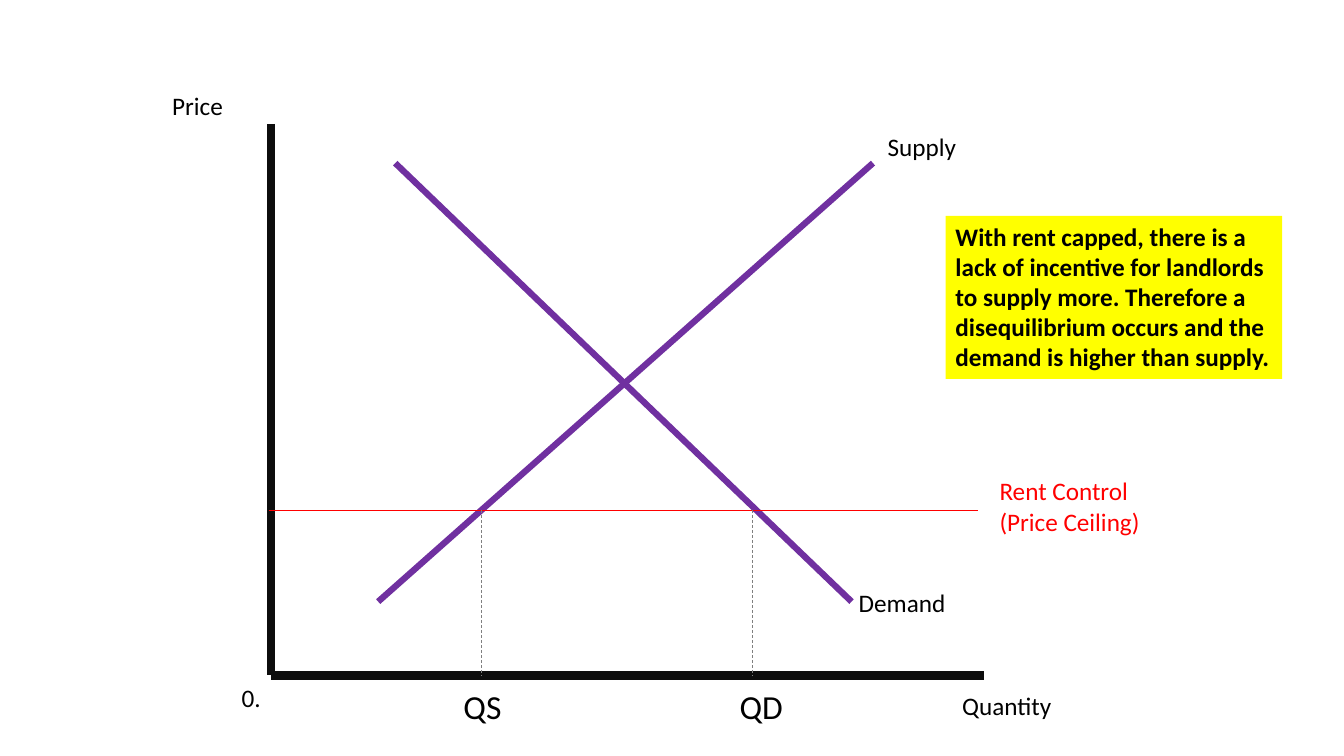
from lxml import etree
from pptx import Presentation
from pptx.dml.color import RGBColor
from pptx.enum.dml import MSO_LINE
from pptx.enum.shapes import MSO_CONNECTOR
from pptx.enum.text import MSO_AUTO_SIZE
from pptx.oxml.ns import qn
from pptx.util import Cm, Pt

STRAIGHT = MSO_CONNECTOR.STRAIGHT
DASH = MSO_LINE.DASH
FIT_TEXT = MSO_AUTO_SIZE.SHAPE_TO_FIT_TEXT
BLACK = RGBColor(0x00, 0x00, 0x00)
AXIS = RGBColor(0x0D, 0x0D, 0x0D)
PURPLE = RGBColor(0x70, 0x30, 0xA0)
RED = RGBColor(0xFF, 0x00, 0x00)
GREY = RGBColor(0x7F, 0x7F, 0x7F)
YELLOW = RGBColor(0xFF, 0xFF, 0x00)
FONT = "Calibri"

ORIGIN_X, ORIGIN_Y = 6.83, 17.02
AXIS_TOP, AXIS_RIGHT = 3.12, 24.79
CURVE_TOP, CURVE_BOTTOM = 4.11, 15.16
CEILING_Y = 12.85
LABEL_HEIGHT = 1.02

AXES = [
    (ORIGIN_X, AXIS_TOP, ORIGIN_X, ORIGIN_Y),
    (ORIGIN_X, ORIGIN_Y, AXIS_RIGHT, ORIGIN_Y),
]
CURVES = [
    (9.96, CURVE_TOP, 21.46, CURVE_BOTTOM),
    (9.53, CURVE_BOTTOM, 22.0, CURVE_TOP),
]
CEILING = (6.78, CEILING_Y, 24.64, CEILING_Y)
QUANTITIES = [("QS", 12.12, 11.43), ("QD", 18.97, 18.39)]
LABELS = [
    ("Price", 4.09, 2.16, 1.8),
    ("Quantity", 24.0, 17.27, 2.79),
    ("Supply", 22.12, 3.18, 2.26),
    ("Demand", 21.39, 14.68, 2.72),
    ("0.", 5.84, 17.07, 0.99),
]
CEILING_LABEL = "Rent Control\n(Price Ceiling)"
EXPLANATION = (
    "With rent capped, there is a\n"
    "lack of incentive for landlords\n"
    "to supply more. Therefore a\n"
    "disequilibrium occurs and the\n"
    "demand is higher than supply."
)


def add_line(slide, ends, color, width, dash=None):
    line = slide.shapes.add_connector(STRAIGHT, *(Cm(end) for end in ends))
    line.line.color.rgb = color
    line.line.width = Pt(width)
    if dash is not None:
        line.line.dash_style = dash
    etree.SubElement(line._element.spPr, qn("a:effectLst"))


def add_text(slide, text, box, size=18, color=BLACK, bold=False, wrap=False, fill=None):
    label = slide.shapes.add_textbox(*(Cm(length) for length in box))
    if fill is not None:
        label.fill.solid()
        label.fill.fore_color.rgb = fill
    frame = label.text_frame
    frame.word_wrap = wrap
    frame.auto_size = FIT_TEXT
    paragraph = frame.paragraphs[0]
    paragraph.text = text
    for run in paragraph.runs:
        run.font.name = FONT
        run.font.size = Pt(size)
        run.font.bold = bold
        run.font.color.rgb = color


def main():
    deck = Presentation()
    deck.slide_width, deck.slide_height = Cm(33.87), Cm(19.05)
    slide = deck.slides.add_slide(deck.slide_layouts[6])

    for axis in AXES:
        add_line(slide, axis, AXIS, 6)
    for curve in CURVES:
        add_line(slide, curve, PURPLE, 4.5)
    add_line(slide, CEILING, RED, 0.5)

    for text, left, top, width in LABELS:
        add_text(slide, text, (left, top, width, LABEL_HEIGHT))
    add_text(slide, CEILING_LABEL, (24.94, 11.86, 4.09, 1.8), color=RED)

    for text, drop_x, left in QUANTITIES:
        add_line(slide, (drop_x, CEILING_Y, drop_x, ORIGIN_Y), GREY, 0.5, dash=DASH)
        add_text(slide, text, (left, 17.17, 2.18, 1.27), size=24, wrap=True)

    add_text(slide, EXPLANATION, (23.83, 5.44, 8.48, 4.11), bold=True, fill=YELLOW)
    deck.save("out.pptx")


if __name__ == "__main__":
    main()
